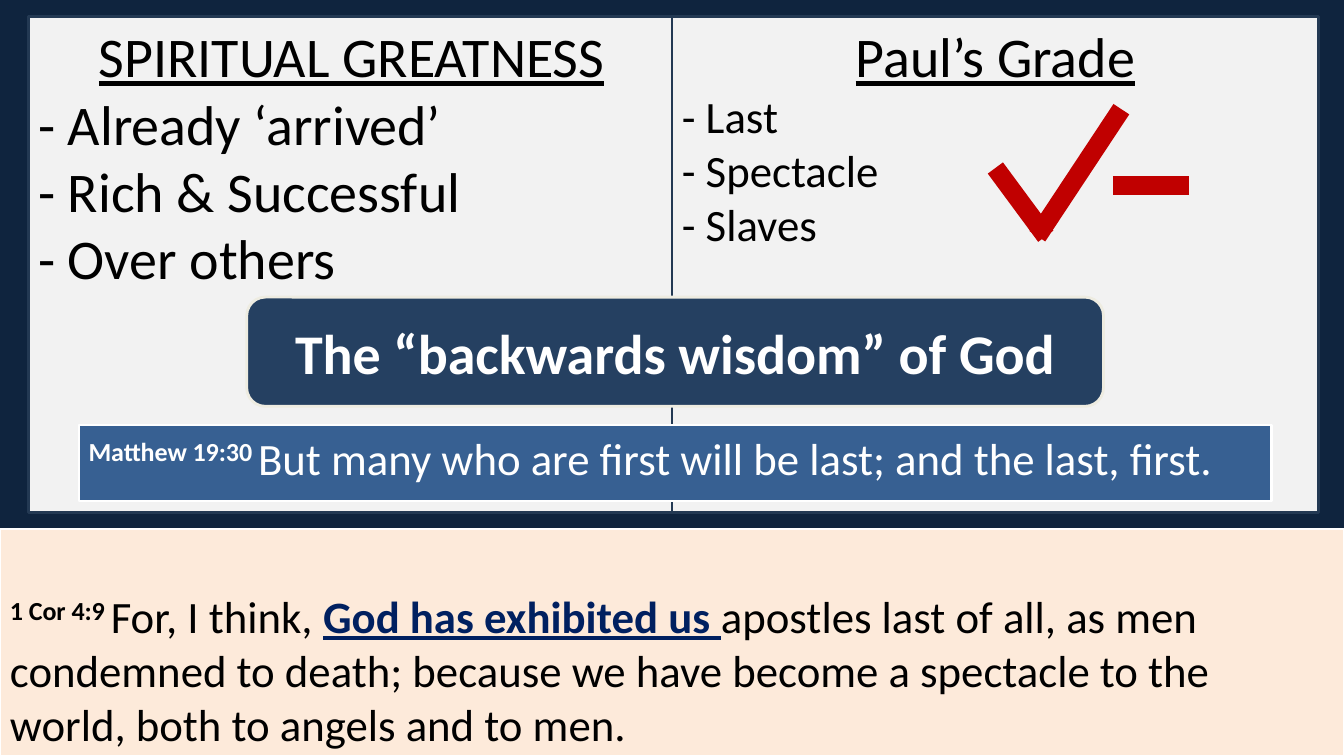
from dataclasses import dataclass

import lxml.etree
import pptx
import pptx.dml.color
import pptx.enum.shapes
import pptx.enum.text
import pptx.oxml.ns
import pptx.util

EMU_PER_PX = 9525  # 96 px to the inch, slide of 1280 x 720
FONT = "Calibri"
BLACK, WHITE, RED = "000000", "FFFFFF", "C00000"
SHAPE = pptx.enum.shapes.MSO_SHAPE
ANCHOR = pptx.enum.text.MSO_ANCHOR
ALIGN = pptx.enum.text.PP_ALIGN


@dataclass
class Run:
    text: str
    color: str = BLACK
    size: int = 32
    bold: bool = False
    underline: bool = False
    raised: bool = False


@dataclass
class Para:
    runs: list[Run]
    centered: bool = False


@dataclass
class Box:
    left: int
    top: int
    width: int
    height: int
    fill: str
    line: str
    line_pt: float
    paras: list[Para]
    kind: SHAPE = SHAPE.RECTANGLE
    adjustments: tuple[float, ...] = ()
    anchor: ANCHOR = ANCHOR.TOP
    inset_top: int = 5
    inset_bottom: int = 5


@dataclass
class Stroke:
    x1: int
    y1: int
    x2: int
    y2: int


def px(n: int) -> pptx.util.Emu:
    return pptx.util.Emu(n * EMU_PER_PX)


def rgb(value: str) -> pptx.dml.color.RGBColor:
    return pptx.dml.color.RGBColor.from_string(value)


def write_para(p, para: Para) -> None:
    p.alignment = ALIGN.CENTER if para.centered else ALIGN.LEFT
    for run in para.runs:
        r = p.add_run()
        r.text = run.text
        r.font.name = FONT
        r.font.size = pptx.util.Pt(run.size)
        r.font.bold = run.bold
        r.font.underline = run.underline
        r.font.color.rgb = rgb(run.color)
        if run.raised:
            r._r.get_or_add_rPr().set("baseline", "30000")


def draw_box(shapes, box: Box) -> None:
    sp = shapes.add_shape(box.kind, px(box.left), px(box.top), px(box.width), px(box.height))
    sp.shadow.inherit = False
    for i, value in enumerate(box.adjustments):
        sp.adjustments[i] = value
    sp.fill.solid()
    sp.fill.fore_color.rgb = rgb(box.fill)
    sp.line.color.rgb = rgb(box.line)
    sp.line.width = pptx.util.Pt(box.line_pt)
    tf = sp.text_frame
    tf.word_wrap = True
    tf.vertical_anchor = box.anchor
    tf.margin_top, tf.margin_bottom = px(box.inset_top), px(box.inset_bottom)
    for i, para in enumerate(box.paras):
        write_para(tf.add_paragraph() if i else tf.paragraphs[0], para)


def draw_stroke(shapes, stroke: Stroke) -> None:
    c = shapes.add_connector(
        pptx.enum.shapes.MSO_CONNECTOR.STRAIGHT,
        px(stroke.x1), px(stroke.y1), px(stroke.x2), px(stroke.y2))
    c.line.color.rgb = rgb(RED)
    c.line.width = pptx.util.Pt(13.5)
    lxml.etree.SubElement(c._element.spPr, pptx.oxml.ns.qn("a:effectLst"))


def panel(left: int, title: str, points: list[str], size: int) -> Box:
    heading = Para([Run(title, size=40, underline=True)], centered=True)
    paras = [heading] + [Para([Run(f"- {point}", size=size)]) for point in points]
    return Box(left, 16, 616, 472, "F2F2F2", "233953", 2, paras)


BOXES = [
    # Scripture passage along the bottom
    Box(0, 504, 1280, 216, "FDEADA", WHITE, 1.5, [Para([
        Run("1 Cor 4:9 ", bold=True, raised=True),
        Run("For, I think, "),
        Run("God has exhibited us ", "002060", bold=True, underline=True),
        Run("apostles last of all, as men condemned to death; because we have "
            "become a spectacle to the world, both to angels and to men."),
    ])], inset_top=57, inset_bottom=0),
    # Two panels side by side
    panel(27, "SPIRITUAL GREATNESS",
          ["Already ‘arrived’", "Rich & Successful", "Over others"], 40),
    panel(640, "Paul’s Grade", ["Last", "Spectacle", "Slaves"], 32),
    # Main point
    Box(235, 283, 816, 104, "254061", "EEECE1", 2,
        [Para([Run("The “backwards wisdom” of God", WHITE, 40, bold=True)], centered=True)],
        SHAPE.ROUNDED_RECTANGULAR_CALLOUT, (-0.22, 0.5, 0.17), ANCHOR.MIDDLE),
    # Supporting verse
    Box(75, 405, 1136, 72, "376092", WHITE, 1.5, [Para([
        Run("Matthew 19:30 ", WHITE, bold=True, raised=True),
        Run("But many who are first will be last; and the last, first.", WHITE),
    ])]),
]

# Check mark followed by a minus
GRADE = [
    Stroke(948, 160, 996, 225),
    Stroke(988, 225, 1068, 104),
    Stroke(1060, 177, 1132, 177),
]


def main() -> None:
    prs = pptx.Presentation()
    prs.slide_width, prs.slide_height = px(1280), px(720)
    s = prs.slides.add_slide(prs.slide_layouts[6])
    s.background.fill.solid()
    s.background.fill.fore_color.rgb = rgb("0F243E")
    for box in BOXES:
        draw_box(s.shapes, box)
    grade = s.shapes.add_group_shape()
    for stroke in GRADE:
        draw_stroke(grade.shapes, stroke)
    prs.save("out.pptx")


if __name__ == "__main__":
    main()
